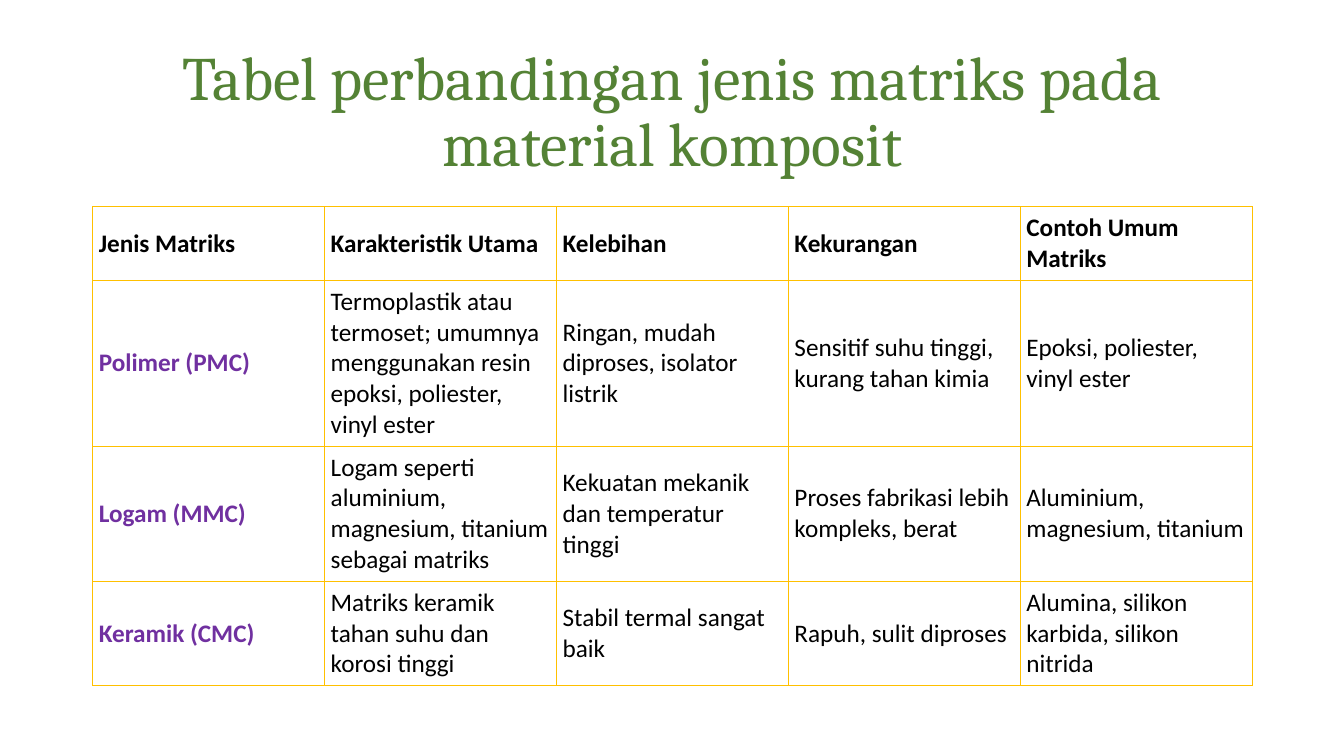
from lxml.etree import SubElement
from pptx import Presentation
from pptx.dml.color import RGBColor
from pptx.enum.text import MSO_ANCHOR, PP_ALIGN
from pptx.oxml.ns import qn
from pptx.util import Inches, Pt

TITLE = "Tabel perbandingan jenis matriks pada material komposit"
ROWS = [
    ("Jenis Matriks", "Karakteristik Utama", "Kelebihan", "Kekurangan",
     "Contoh Umum Matriks"),
    ("Polimer (PMC)",
     "Termoplastik atau termoset; umumnya menggunakan resin epoksi, poliester, vinyl ester",
     "Ringan, mudah diproses, isolator listrik",
     "Sensitif suhu tinggi, kurang tahan kimia",
     "Epoksi, poliester, vinyl ester"),
    ("Logam (MMC)",
     "Logam seperti aluminium, magnesium, titanium sebagai matriks",
     "Kekuatan mekanik dan temperatur tinggi",
     "Proses fabrikasi lebih kompleks, berat",
     "Aluminium, magnesium, titanium"),
    ("Keramik (CMC)",
     "Matriks keramik tahan suhu dan korosi tinggi",
     "Stabil termal sangat baik",
     "Rapuh, sulit diproses",
     "Alumina, silikon karbida, silikon nitrida"),
]
LINES = (2, 5, 4, 3)
LEFT, WIDTH, TOP = 0.92, 11.5, 2.05
LINE, PAD = 0.305, 0.06

GREEN = RGBColor(0x54, 0x82, 0x35)
PURPLE = RGBColor(0x70, 0x30, 0xA0)
BLACK = RGBColor(0, 0, 0)
GOLD = RGBColor(0xFF, 0xC0, 0x00)


def style(font, name, size, color, bold=False):
    font.name, font.size, font.bold = name, Pt(size), bold
    font.color.rgb = color


def border(cell):
    props = cell._tc.get_or_add_tcPr()
    for side in ("a:lnL", "a:lnR", "a:lnT", "a:lnB"):
        line = SubElement(props, qn(side), w=str(Pt(1)))
        fill = SubElement(line, qn("a:solidFill"))
        SubElement(fill, qn("a:srgbClr"), val=str(GOLD))


def write(cell, text, color, bold):
    cell.text = text
    cell.vertical_anchor = MSO_ANCHOR.MIDDLE
    cell.margin_left = cell.margin_right = Inches(PAD)
    cell.margin_top = cell.margin_bottom = Inches(PAD)
    style(cell.text_frame.paragraphs[0].font, "Calibri", 18, color, bold)
    border(cell)
    cell.fill.background()


def main():
    deck = Presentation()
    deck.slide_width, deck.slide_height = Inches(13.33), Inches(7.5)
    slide = deck.slides.add_slide(deck.slide_layouts[5])

    title = slide.shapes.title
    title.left, title.top = Inches(LEFT), Inches(0.4)
    title.width, title.height = Inches(WIDTH), Inches(1.45)
    title.text_frame.text = TITLE
    title.text_frame.word_wrap = True
    title.text_frame.vertical_anchor = MSO_ANCHOR.MIDDLE
    head = title.text_frame.paragraphs[0]
    head.alignment, head.line_spacing = PP_ALIGN.CENTER, 0.9
    style(head.font, "Cambria", 44, GREEN)

    highs = [Inches(count * LINE + 2 * PAD) for count in LINES]
    table = slide.shapes.add_table(
        len(ROWS), len(ROWS[0]), Inches(LEFT), Inches(TOP),
        Inches(WIDTH), sum(highs)).table
    table.first_row = table.horz_banding = False
    for r, texts in enumerate(ROWS):
        table.rows[r].height = highs[r]
        for c, text in enumerate(texts):
            color = PURPLE if r and not c else BLACK
            write(table.cell(r, c), text, color, r == 0 or c == 0)

    deck.save("out.pptx")


if __name__ == "__main__":
    main()
